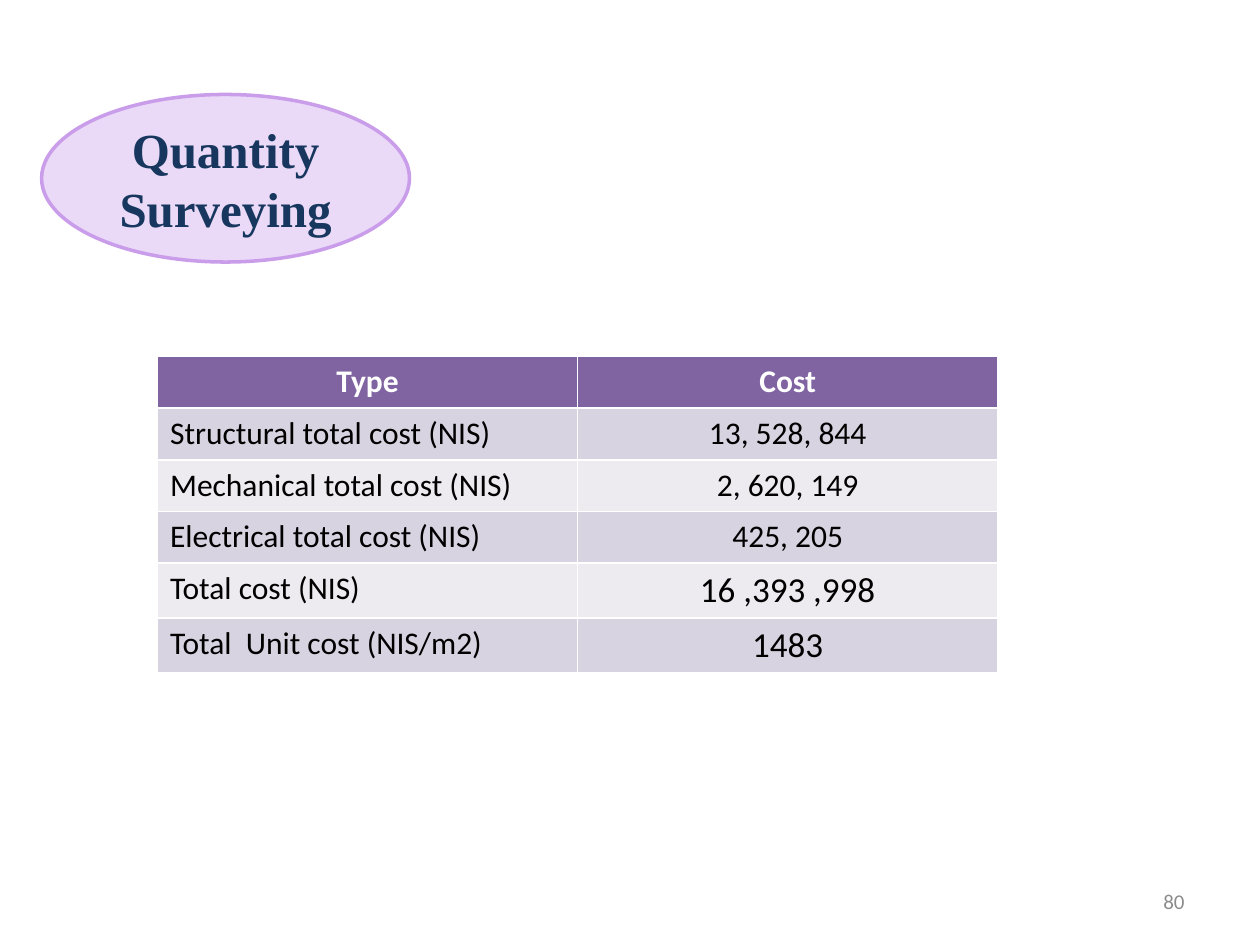
from typing import NamedTuple

import pptx
import pptx.dml.color
import pptx.enum.shapes
import pptx.enum.text
import pptx.util
from pptx.dml.color import RGBColor
from pptx.enum.text import MSO_ANCHOR, PP_ALIGN
from pptx.util import Inches

WHITE = RGBColor(0xFF, 0xFF, 0xFF)
BLACK = RGBColor(0x00, 0x00, 0x00)
GRAY = RGBColor(0x8C, 0x8C, 0x8C)
NAVY = RGBColor(0x17, 0x37, 0x5E)
LILAC = RGBColor(0xEA, 0xD9, 0xF7)
LILAC_EDGE = RGBColor(0xCA, 0x9D, 0xEB)
PURPLE = RGBColor(0x80, 0x64, 0xA2)
BANDS = (RGBColor(0xD8, 0xD3, 0xE0), RGBColor(0xED, 0xEA, 0xF0))


class TextStyle(NamedTuple):
    size: int
    color: RGBColor
    align: PP_ALIGN
    bold: bool = False
    font: str = "Calibri"


class CostRow(NamedTuple):
    label: str
    cost: str
    cost_size: int = 18


COSTS = (
    CostRow("Structural total cost (NIS)", "13, 528, 844"),
    CostRow("Mechanical total cost (NIS)", "2, 620, 149"),
    CostRow("Electrical total cost (NIS)", "425, 205"),
    CostRow("Total cost (NIS)", "16 ,393 ,998", 20),
    CostRow("Total  Unit cost (NIS/m2)", "1483", 20),
)
HEADER = TextStyle(18, WHITE, PP_ALIGN.CENTER, bold=True)
LABEL = TextStyle(18, BLACK, PP_ALIGN.LEFT)
COST = TextStyle(18, BLACK, PP_ALIGN.CENTER)
HEADING = TextStyle(28, NAVY, PP_ALIGN.CENTER, True, "Times New Roman")
PAGE_NUMBER = TextStyle(12, GRAY, PP_ALIGN.RIGHT)


def write(frame: pptx.text.text.TextFrame, text: str, style: TextStyle) -> None:
    frame.text = text
    paragraph = frame.paragraphs[0]
    paragraph.alignment = style.align
    font = paragraph.runs[0].font
    font.name = style.font
    font.size = pptx.util.Pt(style.size)
    font.bold = style.bold
    font.color.rgb = style.color


def fill_cell(cell: pptx.table._Cell, text: str, style: TextStyle, color: RGBColor) -> None:
    cell.fill.solid()
    cell.fill.fore_color.rgb = color
    write(cell.text_frame, text, style)


def add_cost_table(slide: pptx.slide.Slide) -> None:
    row_height = Inches(0.41)
    row_count = len(COSTS) + 1
    table = slide.shapes.add_table(
        row_count, 2, Inches(1.25), Inches(2.83), Inches(6.67), row_height * row_count
    ).table
    for row in table.rows:
        row.height = row_height
    for column, heading in enumerate(("Type", "Cost")):
        fill_cell(table.cell(0, column), heading, HEADER, PURPLE)
    for index, item in enumerate(COSTS):
        band = BANDS[index % len(BANDS)]
        fill_cell(table.cell(index + 1, 0), item.label, LABEL, band)
        fill_cell(table.cell(index + 1, 1), item.cost, COST._replace(size=item.cost_size), band)


def add_heading(slide: pptx.slide.Slide) -> None:
    heading = slide.shapes.add_shape(
        pptx.enum.shapes.MSO_SHAPE.OVAL, Inches(0.33), Inches(0.75), Inches(2.92), Inches(1.33)
    )
    heading.shadow.inherit = False
    heading.fill.solid()
    heading.fill.fore_color.rgb = LILAC
    heading.line.color.rgb = LILAC_EDGE
    heading.line.width = pptx.util.Pt(2)
    heading.text_frame.vertical_anchor = MSO_ANCHOR.MIDDLE
    write(heading.text_frame, "Quantity Surveying", HEADING)


def add_page_number(slide: pptx.slide.Slide) -> None:
    frame = slide.shapes.add_textbox(
        Inches(7.17), Inches(6.95), Inches(2.33), Inches(0.4)
    ).text_frame
    frame.word_wrap = True
    frame.vertical_anchor = MSO_ANCHOR.MIDDLE
    write(frame, "80", PAGE_NUMBER)


def main() -> None:
    presentation = pptx.Presentation()
    presentation.slide_width = Inches(10)
    presentation.slide_height = Inches(7.5)
    slide = presentation.slides.add_slide(presentation.slide_layouts[6])
    add_page_number(slide)
    add_cost_table(slide)
    add_heading(slide)
    presentation.save("out.pptx")


if __name__ == "__main__":
    main()
